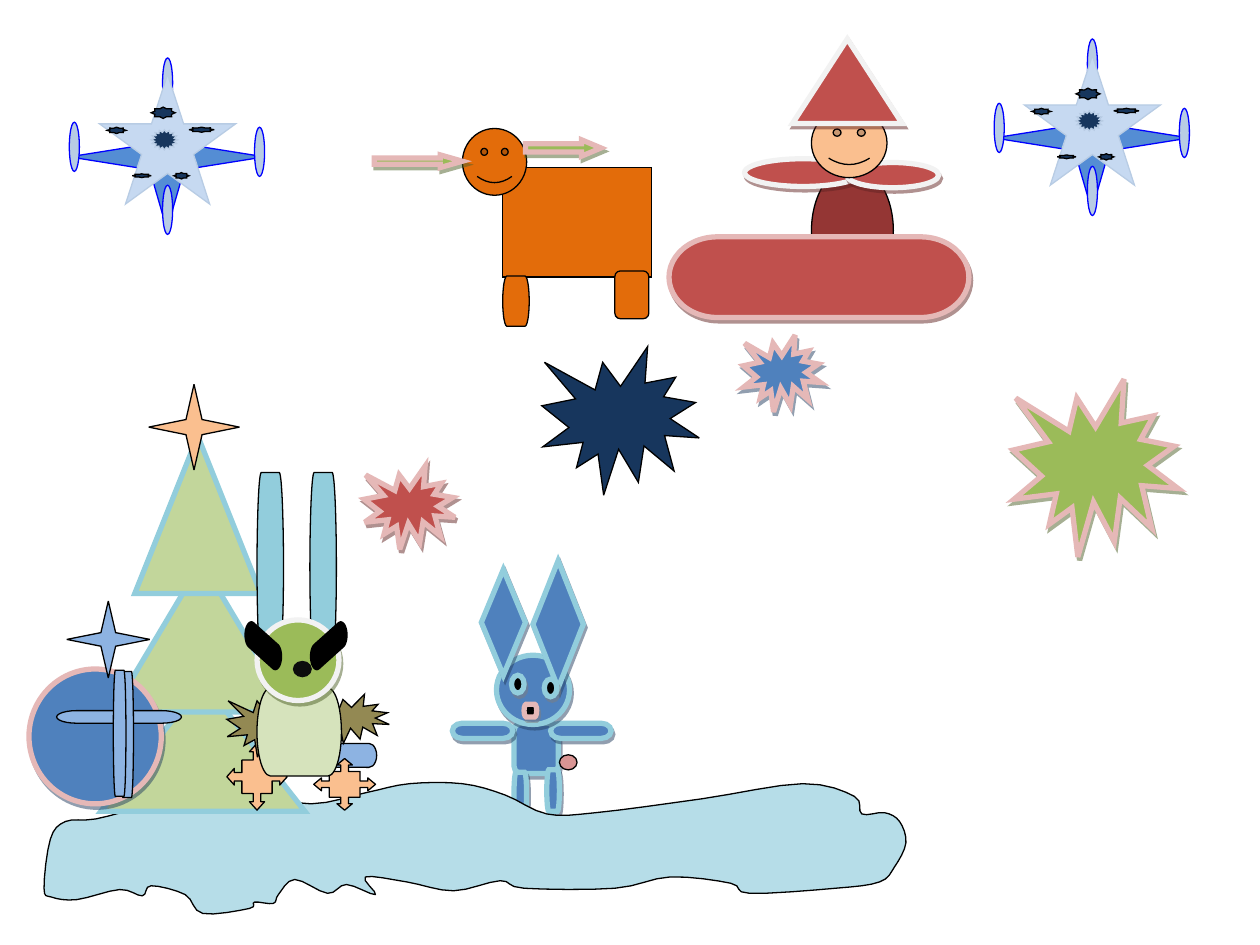
from math import cos, pi, sin

from lxml import etree
from pptx import Presentation
from pptx.dml.color import RGBColor
from pptx.enum.shapes import MSO_SHAPE
from pptx.oxml.ns import qn
from pptx.util import Cm, Pt

OVAL, DIAMOND, TRIANGLE = MSO_SHAPE.OVAL, MSO_SHAPE.DIAMOND, MSO_SHAPE.ISOSCELES_TRIANGLE
RECT, ROUND_RECT = MSO_SHAPE.RECTANGLE, MSO_SHAPE.ROUNDED_RECTANGLE
PILL, DISC = MSO_SHAPE.FLOWCHART_TERMINATOR, MSO_SHAPE.FLOWCHART_CONNECTOR
STAR4, STAR5, STAR8, STAR16 = (MSO_SHAPE.STAR_4_POINT, MSO_SHAPE.STAR_5_POINT,
                               MSO_SHAPE.STAR_8_POINT, MSO_SHAPE.STAR_16_POINT)
BURST, SMILEY, ARROW = MSO_SHAPE.EXPLOSION1, MSO_SHAPE.SMILEY_FACE, MSO_SHAPE.RIGHT_ARROW


def rgb(text):
    return RGBColor.from_string(text)


BLACK, SOOT, GRAY, WHITE = rgb("000000"), rgb("0D0D0D"), rgb("7F7F7F"), rgb("F2F2F2")
NAVY, BLUE, DEEP_BLUE, PURE_BLUE = rgb("17365D"), rgb("4F81BD"), rgb("243F60"), rgb("0000FF")
WING_BLUE, PALE_BLUE, ICE_BLUE, SKY = rgb("548DD4"), rgb("B8CCE4"), rgb("C6D9F1"), rgb("8DB3E2")
AQUA, SNOW = rgb("92CDDC"), rgb("B6DDE8")
GREEN, DEEP_GREEN, LEAF, PALE_GREEN = rgb("9BBB59"), rgb("4E6128"), rgb("C2D69B"), rgb("D6E3BC")
RED, DEEP_RED, WINE = rgb("C0504D"), rgb("622423"), rgb("943634")
PINK, ROSE = rgb("E5B8B7"), rgb("D99594")
ORANGE, PEACH, KHAKI = rgb("E36C0A"), rgb("FABF8F"), rgb("938953")

THIN, THICK = 0.75, 3
GRID = 2.54  # centimetres in one drawing unit

SNOW_KNOTS = [
    (.35, 7.05), (.4, 6.66), (.52, 6.52), (.76, 6.5), (1.2, 6.4), (1.63, 6.42), (1.94, 6.31),
    (2.47, 6.38), (2.91, 6.29), (3.25, 6.22), (3.67, 6.22), (4.01, 6.31), (4.34, 6.46),
    (4.73, 6.45), (5.57, 6.34), (6.37, 6.22), (6.78, 6.32), (6.84, 6.46), (7.02, 6.45),
    (7.14, 6.52), (7.19, 6.69), (7.1, 6.88), (6.98, 7), (6.63, 7.05), (5.95, 7.09),
    (5.8, 7.01), (5.32, 6.96), (4.88, 7.05), (4.16, 7.05), (3.97, 6.99), (3.6, 7.07),
    (3.23, 7), (2.9, 6.96), (2.98, 7.1), (2.75, 7.02), (2.6, 7.09), (2.34, 6.98),
    (2.21, 7.1), (2.17, 7.17), (2.02, 7.16), (1.98, 7.21), (1.61, 7.25), (1.47, 7.1),
    (1.2, 7.03), (1.13, 7.11), (.95, 7.06), (.61, 7.14), (.41, 7.12)]
FLAKE_QUARTER = [(0, 1), (.25, .75), (.125, .75), (.125, .5), (.5, .5),
                 (.5, .125), (.75, .125), (.75, .25)]


def smooth_loop(knots, steps=4):
    """Points of a closed Catmull-Rom curve through the knots."""
    points = []
    for i in range(len(knots)):
        around = [knots[(i + k) % len(knots)] for k in (-1, 0, 1, 2)]
        for t in (step / steps for step in range(steps)):
            points.append(tuple(
                b + t / 2 * (c - a + t * (2 * a - 5 * b + 4 * c - d + t * (3 * (b - c) + d - a)))
                for a, b, c, d in zip(*around)))
    return points


class Scene:
    def __init__(self, slide):
        self.slide = slide
        self.shapes = slide.shapes

    def start_group(self):
        self.shapes = self.slide.shapes.add_group_shape().shapes

    def style(self, shape, fill, line, width, shadow=None):
        shape.fill.solid()
        shape.fill.fore_color.rgb = fill
        if line is None:
            shape.line.fill.background()
        else:
            shape.line.color.rgb = line
            shape.line.width = Pt(width)
        shape.shadow.inherit = False
        if shadow is not None:
            effects = shape._element.spPr.find(qn("a:effectLst"))
            outer = etree.SubElement(effects, qn("a:outerShdw"), blurRad="0", dist=str(Pt(2.2)),
                                     dir=str(63 * 60000), algn="ctr", rotWithShape="0")
            color = etree.SubElement(outer, qn("a:srgbClr"), val=str(shadow))
            etree.SubElement(color, qn("a:alpha"), val="50000")

    def preset(self, kind, box, fill, line=BLACK, width=THIN, shadow=None, adjust=()):
        shape = self.shapes.add_shape(kind, *(Cm(v * GRID) for v in box))
        for index, value in enumerate(adjust):
            shape.adjustments[index] = value
        self.style(shape, fill, line, width, shadow)
        if line is not None:
            outline = shape._element.spPr.find(qn("a:ln"))
            etree.SubElement(outline, qn("a:miter"), lim="800000")

    def bold(self, kind, box, fill, line, shadow, adjust=()):
        """Preset with a thick outline and a hard shadow."""
        self.preset(kind, box, fill, line, THICK, shadow, adjust)

    def outline(self, points, fill, line=BLACK):
        corners = [(Cm(x * GRID), Cm(y * GRID)) for x, y in points]
        builder = self.shapes.build_freeform(*corners[0])
        builder.add_line_segments(corners[1:], close=True)
        self.style(builder.convert_to_shape(), fill, line, THIN)

    def snowflake(self, left, top, width, height):
        points, quarter = [], FLAKE_QUARTER
        for _ in range(4):
            points += quarter
            quarter = [(y, -x) for x, y in quarter]
        self.outline([(left + width / 2 * (1 + x), top + height / 2 * (1 - y))
                      for x, y in points], PEACH)

    def eyebrow(self, front, shift_x):
        """Ellipse drawn out upwards and sideways into a slanted rod."""
        left, top, width, height = front
        shift_y, points = -.17, []
        for step in range(48):
            x, y = cos(step * pi / 24), sin(step * pi / 24)
            far = x / width * shift_x + y / height * shift_y > 0
            points.append((left + width / 2 * (1 + x) + far * shift_x,
                           top + height / 2 * (1 + y) + far * shift_y))
        self.outline(points, BLACK, None)

    def star_plane(self, left, top):
        self.start_group()
        self.preset(STAR4, (left, top, 1.55, 1.15), WING_BLUE, PURE_BLUE, adjust=[.125])
        for x, y in [(0, .3), (1.47, .34), (.74, .8), (.74, -.21)]:
            self.preset(OVAL, (left + x, top + y, .08, .39), PALE_BLUE, PURE_BLUE)
        self.preset(STAR5, (left + .24, top - .08, 1.08, 1.03), ICE_BLUE, PALE_BLUE)
        self.preset(STAR16, (left + .65, top + .36, .21, .16), NAVY, PALE_BLUE)
        for x, y, width, height in [(.83, .7, .12, .05), (.5, .71, .15, .03), (.3, .34, .15, .05),
                                    (.65, .18, .19, .09), (.95, .34, .2, .04)]:
            self.preset(STAR8, (left + x, top + y, width, height), NAVY)

    def blue_rabbit(self):
        self.start_group()
        fur = BLUE, AQUA, DEEP_BLUE
        self.bold(ROUND_RECT, (4.08, 5.74, .35, .4), *fur)
        for arm_left in (3.59, 4.37):
            self.bold(PILL, (arm_left, 5.74, .48, .12), *fur)
        for leg in [(4.08, 6.13), (4.34, 6.11)]:
            self.bold(PILL, (*leg, .1, .33), *fur)
        self.preset(DISC, (4.44, 5.99, .14, .12), ROSE)
        self.bold(OVAL, (3.94, 5.2, .58, .55), *fur)
        for ear in [(3.82, 4.52, .35, .84), (4.23, 4.45, .4, 1.01)]:
            self.bold(DIAMOND, ear, *fur)
        for eye in [(4.06, 5.36), (4.32, 5.39)]:
            self.bold(DISC, (*eye, .1, .14), BLACK, AQUA, GRAY)
        self.bold(PILL, (4.16, 5.59, .1, .1), BLACK, PINK, GRAY)

    def snow_and_tree(self):
        self.start_group()
        self.outline(smooth_loop(SNOW_KNOTS), SNOW)
        for tier in [(.8, 5.41, 1.62, 1.03), (.89, 4.46, 1.42, 1.19), (1.07, 3.46, 1, 1.25)]:
            self.preset(TRIANGLE, tier, LEAF, AQUA, THICK)
        self.preset(STAR4, (1.18, 3.05, .72, .68), PEACH, adjust=[.125])

    def bursts(self):
        self.start_group()
        self.preset(BURST, (4.3, 2.75, 1.25, 1.18), NAVY)
        self.bold(BURST, (8.04, 3.01, 1.31, 1.41), GREEN, PINK, DEEP_GREEN)
        self.bold(BURST, (5.9, 2.66, .61, .61), BLUE, PINK, DEEP_BLUE)
        self.bold(BURST, (2.89, 3.7, .72, .66), RED, PINK, DEEP_RED)

    def reindeer_and_sleigh(self):
        self.start_group()
        for kind, box in [(RECT, (3.99, 1.33, 1.18, .87)), (PILL, (3.99, 2.19, .21, .4)),
                          (ROUND_RECT, (4.88, 2.15, .27, .38)), (SMILEY, (3.67, 1.02, .51, .53))]:
            self.preset(kind, box, ORANGE)
        for antler, head in [((4.17, 1.11, .6, .13), 1.19), ((2.97, 1.23, .7, .1), 1.75)]:
            self.bold(ARROW, antler, GREEN, PINK, DEEP_GREEN, [.5, head])
        self.preset(OVAL, (6.44, 1.32, .65, 1.02), WINE)
        self.bold(OVAL, (5.91, 1.26, .93, .22), RED, WHITE, DEEP_RED)
        self.bold(PILL, (5.31, 1.88, 2.38, .64), RED, PINK, DEEP_RED)
        self.bold(OVAL, (6.72, 1.29, .73, .2), RED, WHITE, DEEP_RED)
        self.preset(SMILEY, (6.44, .86, .6, .55), PEACH)
        self.bold(TRIANGLE, (6.29, .31, .87, .67), RED, WHITE, DEEP_RED)

    def green_rabbit(self):
        self.start_group()
        self.preset(PILL, (2.61, 5.9, .38, .19), SKY)
        self.snowflake(1.8, 5.9, .48, .53)
        self.snowflake(2.49, 6.02, .49, .41)
        for paw in [(1.8, 5.51, .62, .5), (2.49, 5.51, .6, .39)]:
            self.preset(BURST, paw, KHAKI)
        self.preset(PILL, (2.04, 5.46, .67, .7), PALE_GREEN)
        for ear_left in (2.04, 2.46):
            self.preset(PILL, (ear_left, 3.75, .21, 1.5), AQUA)
        self.bold(DISC, (2.04, 4.92, .65, .64), GREEN, WHITE, DEEP_GREEN)
        for brow_left, shift in [(2.13, -.19), (2.46, .19)]:
            self.eyebrow((brow_left, 5.1, .11, .22), shift)
        self.preset(DISC, (2.33, 5.25, .14, .12), SOOT, SOOT)

    def ornament(self):
        self.start_group()
        self.bold(DISC, (.23, 5.31, 1.05, 1.07), BLUE, PINK, DEEP_BLUE)
        self.preset(STAR4, (.53, 4.77, .66, .61), SKY, adjust=[.125])
        for ribbon in [(.45, 5.64, .99, .1), (.96, 5.33, .1, 1), (.9, 5.32, .1, 1)]:
            self.preset(PILL, ribbon, SKY)


deck = Presentation()
deck.slide_width, deck.slide_height = Cm(25.4), Cm(19.05)
scene = Scene(deck.slides.add_slide(deck.slide_layouts[6]))
scene.star_plane(7.89, .52)
scene.blue_rabbit()
scene.snow_and_tree()
scene.bursts()
scene.reindeer_and_sleigh()
scene.green_rabbit()
scene.ornament()
scene.star_plane(.55, .67)
deck.save("out.pptx")
